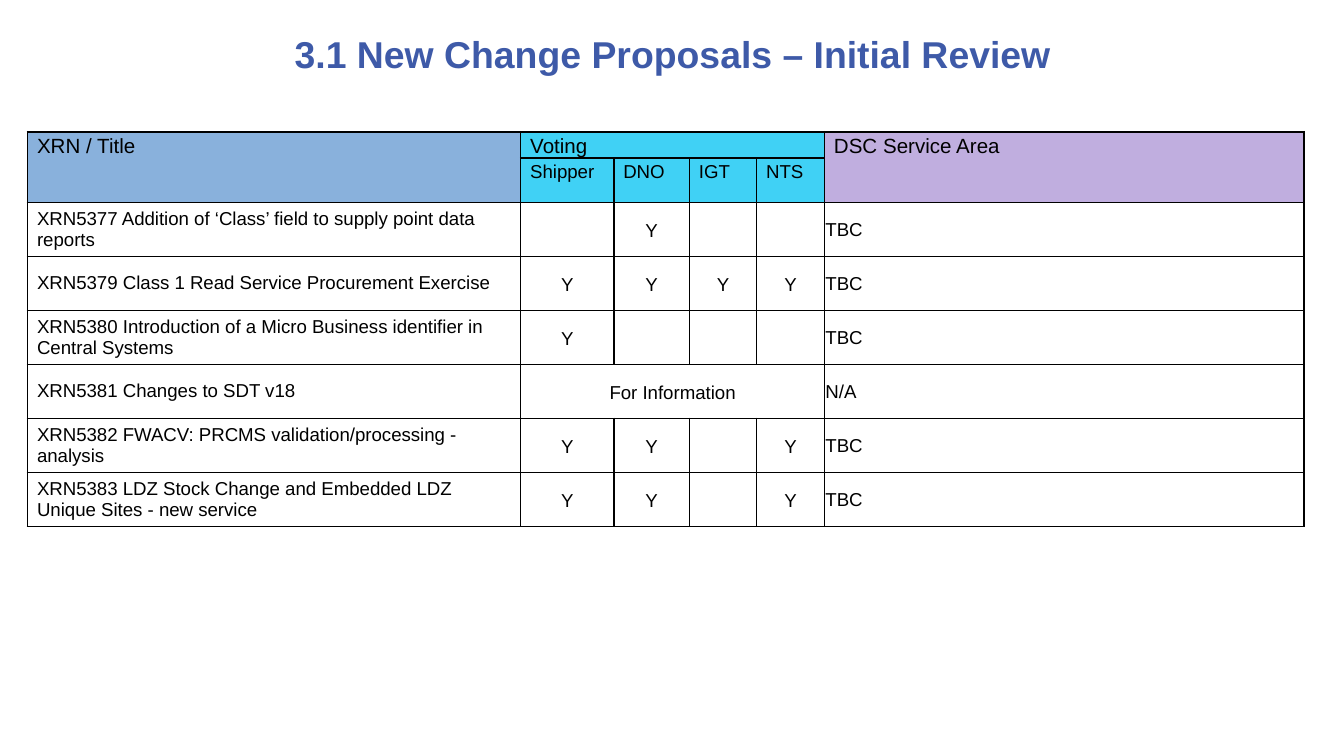
from lxml.etree import SubElement
from pptx import Presentation
from pptx.dml.color import RGBColor
from pptx.enum.text import MSO_ANCHOR, PP_ALIGN
from pptx.oxml.ns import qn
from pptx.util import Cm, Pt

COLORS = {
    "title": "3E5AA8",
    "text": "000000",
    "border": "000000",
    "xrn": "89B1DC",
    "voting": "40D1F5",
    "area": "C0AEDF",
}


def write(target, text, size=10, color="text", bold=False,
          align=PP_ALIGN.LEFT, spacing=1.0):
    """Fill a text frame with one formatted paragraph."""
    paragraph = target.paragraphs[0]
    paragraph.alignment = align
    paragraph.line_spacing = spacing
    paragraph.font.size = Pt(size)
    if text:
        run = paragraph.add_run()
        run.text = text
        run.font.name = "Arial"
        run.font.size = Pt(size)
        run.font.bold = bold
        run.font.color.rgb = RGBColor.from_string(COLORS[color])


def add_borders(cell, width=1):
    """Draw a solid line on all four sides of a table cell."""
    properties = cell._tc.get_or_add_tcPr()
    for side in ("a:lnL", "a:lnR", "a:lnT", "a:lnB"):
        line = SubElement(properties, qn(side), w=str(Pt(width)))
        fill = SubElement(line, qn("a:solidFill"))
        SubElement(fill, qn("a:srgbClr"), val=COLORS["border"])


presentation = Presentation()
presentation.slide_width = Cm(25.4)
presentation.slide_height = Cm(14.29)
slide = presentation.slides.add_slide(presentation.slide_layouts[5])

# Title
heading = slide.shapes.title
heading.left, heading.top = Cm(2.7), Cm(0.52)
heading.width, heading.height = Cm(20.04), Cm(1)
heading.text_frame.vertical_anchor = MSO_ANCHOR.MIDDLE
write(heading.text_frame, "3.1 New Change Proposals – Initial Review",
      size=20, color="title", bold=True, align=PP_ALIGN.CENTER)

# Proposals: title, one vote per voter (or a note across all voters), area
voters = ["Shipper", "DNO", "IGT", "NTS"]
proposals = [
    ("XRN5377 Addition of ‘Class’ field to supply point data reports",
     ["", "Y", "", ""], "TBC"),
    ("XRN5379 Class 1 Read Service Procurement Exercise",
     ["Y", "Y", "Y", "Y"], "TBC"),
    ("XRN5380 Introduction of a Micro Business identifier in Central Systems",
     ["Y", "", "", ""], "TBC"),
    ("XRN5381 Changes to SDT v18",
     ["For Information", "", "", ""], "N/A"),
    ("XRN5382 FWACV: PRCMS validation/processing - analysis",
     ["Y", "Y", "", "Y"], "TBC"),
    ("XRN5383 LDZ Stock Change and Embedded LDZ Unique Sites - new service",
     ["Y", "Y", "", "Y"], "TBC"),
]

# Table grid
column_widths = [9.32, 1.76, 1.43, 1.27, 1.28, 9.06]
row_heights = [0.5, 0.84] + [1.02] * len(proposals)
review = slide.shapes.add_table(
    len(row_heights), len(column_widths), Cm(0.52), Cm(2.49),
    Cm(sum(column_widths)), Cm(sum(row_heights))).table
review.first_row = False
review.horz_banding = False
for column, width in zip(review.columns, column_widths):
    column.width = Cm(width)
for row, height in zip(review.rows, row_heights):
    row.height = Cm(height)
for cell in review.iter_cells():
    add_borders(cell)
    cell.fill.background()
    cell.margin_left = cell.margin_right = Cm(0.18)
    cell.margin_top = cell.margin_bottom = 0

# Header rows
area_column = len(column_widths) - 1
headers = [
    (0, 0, "XRN / Title", 11, "xrn"),
    (0, 1, "Voting", 11, "voting"),
    (0, area_column, "DSC Service Area", 11, "area"),
]
headers += [(1, index, voter, 10, "voting")
            for index, voter in enumerate(voters, start=1)]
for row, column, label, size, color in headers:
    cell = review.cell(row, column)
    cell.fill.solid()
    cell.fill.fore_color.rgb = RGBColor.from_string(COLORS[color])
    write(cell.text_frame, label, size=size, spacing=1.15)
for column in (0, area_column):
    review.cell(0, column).merge(review.cell(1, column))
review.cell(0, 1).merge(review.cell(0, len(voters)))

# Proposal rows
for row, (proposal, votes, area) in enumerate(proposals, start=2):
    for column, text in enumerate([proposal, *votes, area]):
        cell = review.cell(row, column)
        cell.vertical_anchor = MSO_ANCHOR.MIDDLE
        is_vote = 0 < column < area_column
        write(cell.text_frame, text,
              align=PP_ALIGN.CENTER if is_vote else PP_ALIGN.LEFT,
              spacing=1.15 if is_vote else 1.0)
    cell.margin_left = cell.margin_right = cell.margin_top = Cm(0.02)
    if votes[0] == "For Information":
        review.cell(row, 1).merge(review.cell(row, len(voters)))

presentation.save("out.pptx")
